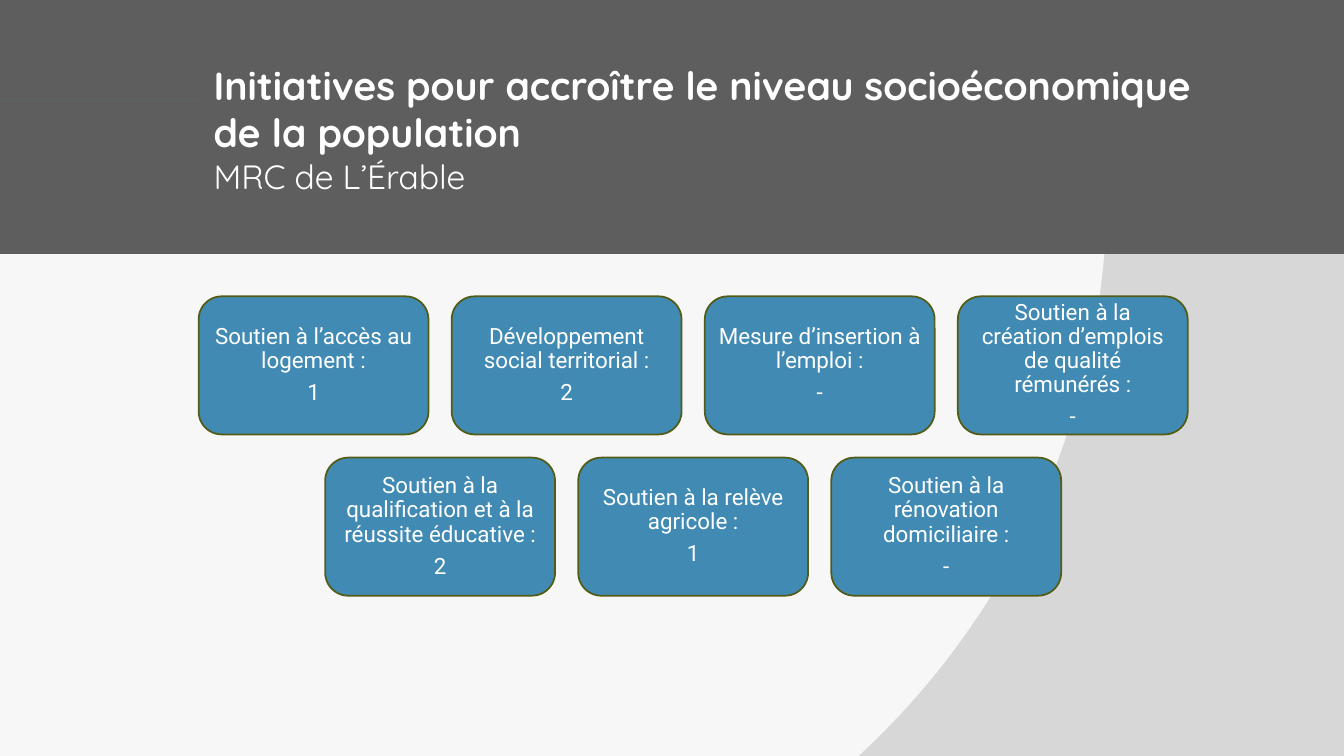
import pptx
import pptx.dml.color
import pptx.enum.shapes
import pptx.enum.text
import pptx.oxml
import pptx.oxml.ns
import pptx.util

Inches = pptx.util.Inches
Pt = pptx.util.Pt

COLORS = {"band": "5E5E5E", "blue": "418AB3", "outline": "535C14", "white": "FFFFFF",
          "light": "F7F7F7", "gray": "D7D7D7"}
TITLE = "Initiatives pour accroître le niveau socioéconomique de la population"
SUBTITLE = "MRC de L’Érable"
ROWS = [
    [("Soutien à l’accès au logement :", "1"),
     ("Développement social territorial :", "2"),
     ("Mesure d’insertion à l’emploi :", "-"),
     ("Soutien à la création d’emplois de qualité rémunérés :", "-")],
    [("Soutien à la qualification et à la réussite éducative :", "2"),
     ("Soutien à la relève agricole :", "1"),
     ("Soutien à la rénovation domiciliaire :", "-")],
]
ARROW = [(0, 0.78), (1.46, 0.78), (1.48, 0.79), (1.73, 1.04), (1.74, 1.06),
         (1.73, 1.08), (1.48, 1.33), (1.46, 1.34), (0, 1.33)]
CARD_WIDTH, CARD_HEIGHT = 2.28, 1.37
STEP_X, STEP_Y = 2.51, 1.6
GRID_CENTER, GRID_TOP = 6.875, 2.94


def rgb(name):
    """Return the palette colour of that name."""
    return pptx.dml.color.RGBColor.from_string(COLORS[name])


def write(para, text, size=16, font="Roboto", bold=False, color="white"):
    """Add a formatted run to a paragraph."""
    span = para.add_run()
    span.text = text
    span.font.size = Pt(size)
    span.font.name = font
    span.font.bold = bold
    span.font.color.rgb = rgb(color)


def paint(shape, fill, line=None):
    """Set the fill and outline of a shape."""
    shape.shadow.inherit = False
    shape.fill.solid()
    shape.fill.fore_color.rgb = rgb(fill)
    if line:
        shape.line.color.rgb = rgb(line)
        shape.line.width = Pt(1.25)
    else:
        shape.line.fill.background()


def set_background(page):
    """Fill the page with a two-tone circular gradient."""
    page.background.fill.gradient()
    gradient = page.background._cSld.find(".//" + pptx.oxml.ns.qn("a:gradFill"))
    for child in list(gradient):
        gradient.remove(child)
    namespace = pptx.oxml.ns.nsdecls("a")
    stops = "".join(f'<a:gs pos="100000"><a:srgbClr val="{COLORS[name]}"/></a:gs>'
                    for name in ("light", "gray"))
    gradient.append(pptx.oxml.parse_xml(f"<a:gsLst {namespace}>{stops}</a:gsLst>"))
    gradient.append(pptx.oxml.parse_xml(
        f'<a:path {namespace} path="circle">'
        '<a:fillToRect l="50000" t="50000" r="100000" b="100000"/></a:path>'))


def add_header(page):
    """Draw the band, the title and the arrow."""
    band = page.shapes.add_shape(pptx.enum.shapes.MSO_SHAPE.RECTANGLE,
                                 0, 0, Inches(13.33), Inches(2.52))
    paint(band, "band")
    box = page.shapes.add_textbox(Inches(2.02), Inches(0.56), Inches(10.26), Inches(1.59))
    box.text_frame.word_wrap = True
    para = box.text_frame.paragraphs[0]
    write(para, TITLE, size=28, font="Quicksand", bold=True)
    para.add_line_break()
    write(para, SUBTITLE, size=24, font="Quicksand")
    builder = page.shapes.build_freeform(*ARROW[0], scale=Inches(1))
    builder.add_line_segments(ARROW[1:], close=True)
    paint(builder.convert_to_shape(), "blue")


def add_card(page, left, top, lines):
    """Draw one rounded card with its label and count."""
    card = page.shapes.add_shape(pptx.enum.shapes.MSO_SHAPE.ROUNDED_RECTANGLE,
                                 Inches(left), Inches(top),
                                 Inches(CARD_WIDTH), Inches(CARD_HEIGHT))
    paint(card, "blue", "outline")
    frame = card.text_frame
    frame.word_wrap = True
    frame.vertical_anchor = pptx.enum.text.MSO_ANCHOR.MIDDLE
    frame.margin_left = frame.margin_right = Inches(0.07)
    frame.margin_top = frame.margin_bottom = Inches(0.07)
    for index, text in enumerate(lines):
        para = frame.add_paragraph() if index else frame.paragraphs[0]
        para.alignment = pptx.enum.text.PP_ALIGN.CENTER
        para.line_spacing = 0.9
        para.space_after = Pt(5.6)
        write(para, text)


def main():
    """Build and save the slide."""
    deck = pptx.Presentation()
    deck.slide_width, deck.slide_height = Inches(13.33), Inches(7.5)
    page = deck.slides.add_slide(deck.slide_layouts[6])
    set_background(page)
    add_header(page)
    for row, cards in enumerate(ROWS):
        start = GRID_CENTER - (CARD_WIDTH + STEP_X * (len(cards) - 1)) / 2
        for column, lines in enumerate(cards):
            add_card(page, start + column * STEP_X, GRID_TOP + row * STEP_Y, lines)
    deck.save("out.pptx")


if __name__ == "__main__":
    main()
